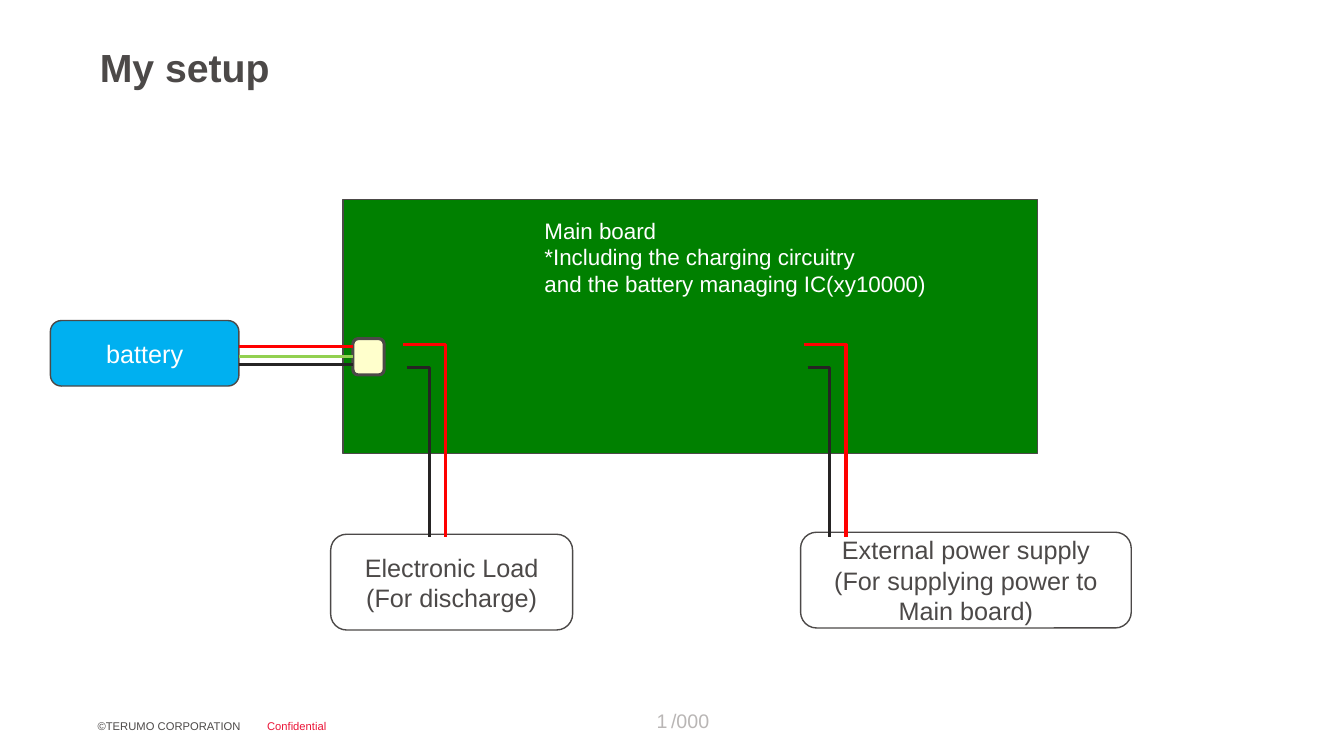
from pptx import Presentation
from pptx.dml.color import RGBColor
from pptx.enum.shapes import MSO_CONNECTOR, MSO_SHAPE
from pptx.enum.text import MSO_ANCHOR, PP_ALIGN
from pptx.util import Inches, Pt
from lxml import etree

COLORS = {
    "text": "4C4948", "white": "FFFFFF", "board": "008000", "battery": "00B0F0",
    "socket": "FFFFCC", "red": "FF0000", "black": "262424", "green": "92D050",
    "confidential": "EB1336", "page": "B9B6B5",
}
NS = "http://schemas.openxmlformats.org/drawingml/2006/main"


def rgb(name):
    return RGBColor.from_string(COLORS[name])


def write(tf, text, size, color, align=PP_ALIGN.LEFT, bold=False):
    p = tf.paragraphs[0]
    p.text = text
    p.alignment = align
    for r in p.runs:
        r.font.name = "Arial"
        r.font.size = Pt(size)
        r.font.bold = bold
        r.font.color.rgb = rgb(color)
    return p


def add_label(s, box, text, size, color, align=PP_ALIGN.LEFT, bold=False,
              anchor=MSO_ANCHOR.TOP, wrap=True, inset=True):
    tf = s.shapes.add_textbox(*map(Inches, box)).text_frame
    tf.word_wrap = wrap
    tf.vertical_anchor = anchor
    if not inset:
        tf.margin_left = tf.margin_right = tf.margin_top = tf.margin_bottom = 0
    return write(tf, text, size, color, align, bold)


def add_block(s, kind, box, fill, text="", color="text", line=1):
    sp = s.shapes.add_shape(kind, *map(Inches, box))
    sp.shadow.inherit = False
    sp.fill.solid()
    sp.fill.fore_color.rgb = rgb(fill)
    sp.line.color.rgb = rgb("text")
    sp.line.width = Pt(line)
    if text:
        sp.text_frame.word_wrap = True
        sp.text_frame.vertical_anchor = MSO_ANCHOR.MIDDLE
        write(sp.text_frame, text, 18, color, PP_ALIGN.CENTER)
    return sp


def add_battery_wire(s, y, color):
    wire = s.shapes.add_connector(
        MSO_CONNECTOR.STRAIGHT, Inches(2.37), Inches(y), Inches(3.5), Inches(y))
    wire.line.color.rgb = rgb(color)
    wire.line.width = Pt(2)
    etree.SubElement(wire._element.spPr, f"{{{NS}}}effectLst")
    return wire


def add_bent_wire(s, x, y, width, color):
    """Wire running right from (x, y), then down to the device below the board."""
    fb = s.shapes.build_freeform(Inches(x), Inches(y))
    corner = Inches(x + width)
    fb.add_line_segments([(corner, Inches(y)), (corner, Inches(5.33))], close=False)
    wire = fb.convert_to_shape()
    wire.shadow.inherit = False
    wire.fill.background()
    wire.line.color.rgb = rgb(color)
    wire.line.width = Pt(2.25)


def add_device(s, box, text, wire_x):
    add_block(s, MSO_SHAPE.ROUNDED_RECTANGLE, box, "white", text)
    add_bent_wire(s, wire_x, 3.42, 0.42, "red")
    add_bent_wire(s, wire_x + 0.04, 3.65, 0.22, "black")


def add_footer(s):
    middle = MSO_ANCHOR.MIDDLE
    add_label(s, (0.87, 7, 1.66, 0.4), "©TERUMO CORPORATION", 8, "text", anchor=middle)
    add_label(s, (2.55, 7, 2.01, 0.4), "Confidential", 8, "confidential", anchor=middle)
    add_label(s, (5.83, 6.95, 0.79, 0.4), "1", 14, "page", PP_ALIGN.RIGHT,
              anchor=middle, inset=False)
    add_label(s, (6.45, 6.95, 0.79, 0.4), "/000", 14, "page", PP_ALIGN.CENTER,
              anchor=middle, wrap=False, inset=False)


def main():
    prs = Presentation()
    prs.slide_width, prs.slide_height = Inches(13.33), Inches(7.5)
    s = prs.slides.add_slide(prs.slide_layouts[6])

    add_footer(s)
    title = add_label(s, (0.99, 0.48, 11.5, 0.49), "My setup", 28, "text",
                      bold=True, inset=False)
    title.line_spacing = 0.9

    add_block(s, MSO_SHAPE.RECTANGLE, (3.4, 1.98, 6.89, 2.52), "board")
    add_label(s, (5.4, 2.15, 4.25, 1),
              "Main board\v*Including the charging circuitry\v"
              "and the battery managing IC(xy10000)", 16, "white", inset=False)

    add_block(s, MSO_SHAPE.ROUNDED_RECTANGLE, (0.5, 3.18, 1.87, 0.65),
              "battery", "battery", "white")
    socket = add_block(s, MSO_SHAPE.ROUNDED_RECTANGLE, (3.5, 3.36, 0.31, 0.36),
                       "socket", line=2.25)
    add_battery_wire(s, 3.44, "red")
    add_battery_wire(s, 3.62, "black")
    add_battery_wire(s, 3.54, "green").end_connect(socket, 1)

    add_device(s, (3.28, 5.3, 2.4, 0.95), "Electronic Load\v(For discharge)", 4)
    add_device(s, (7.94, 5.28, 3.28, 0.95),
               "External power supply\v(For supplying power to Main board)", 7.97)

    prs.save("out.pptx")


if __name__ == "__main__":
    main()
